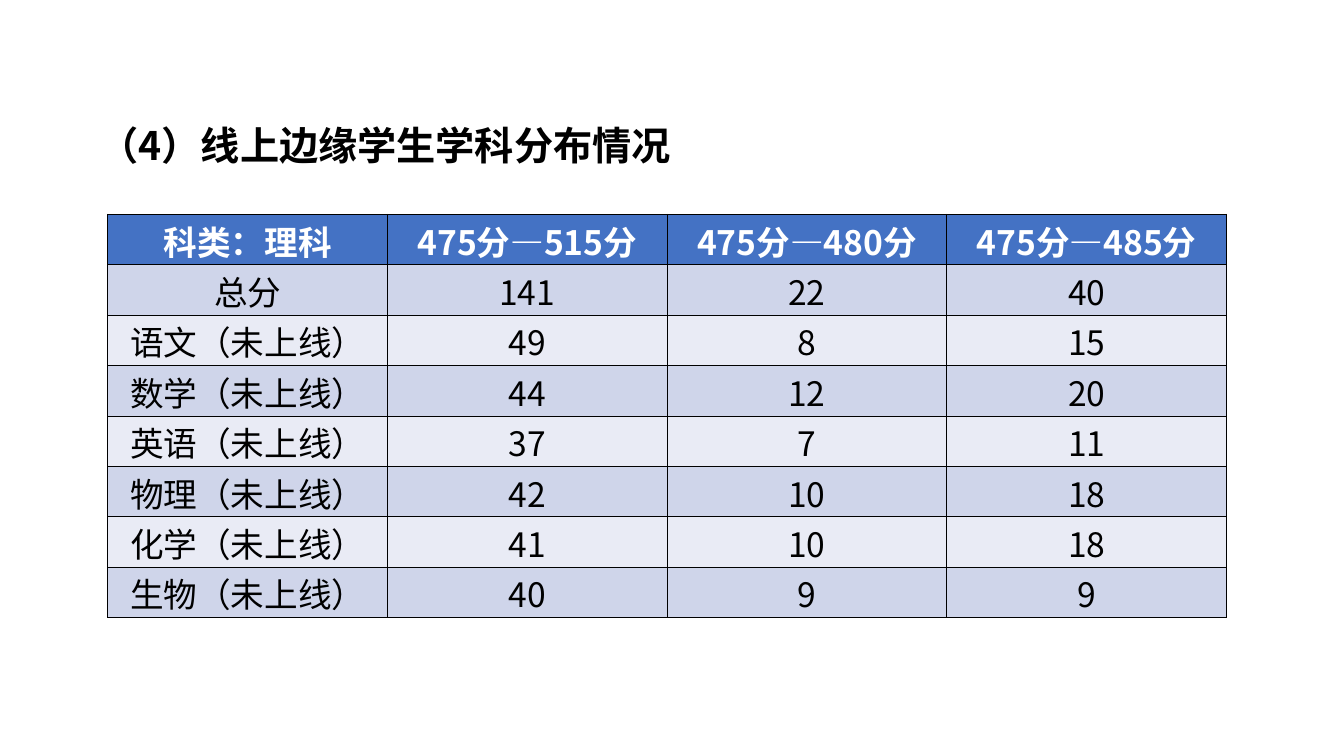
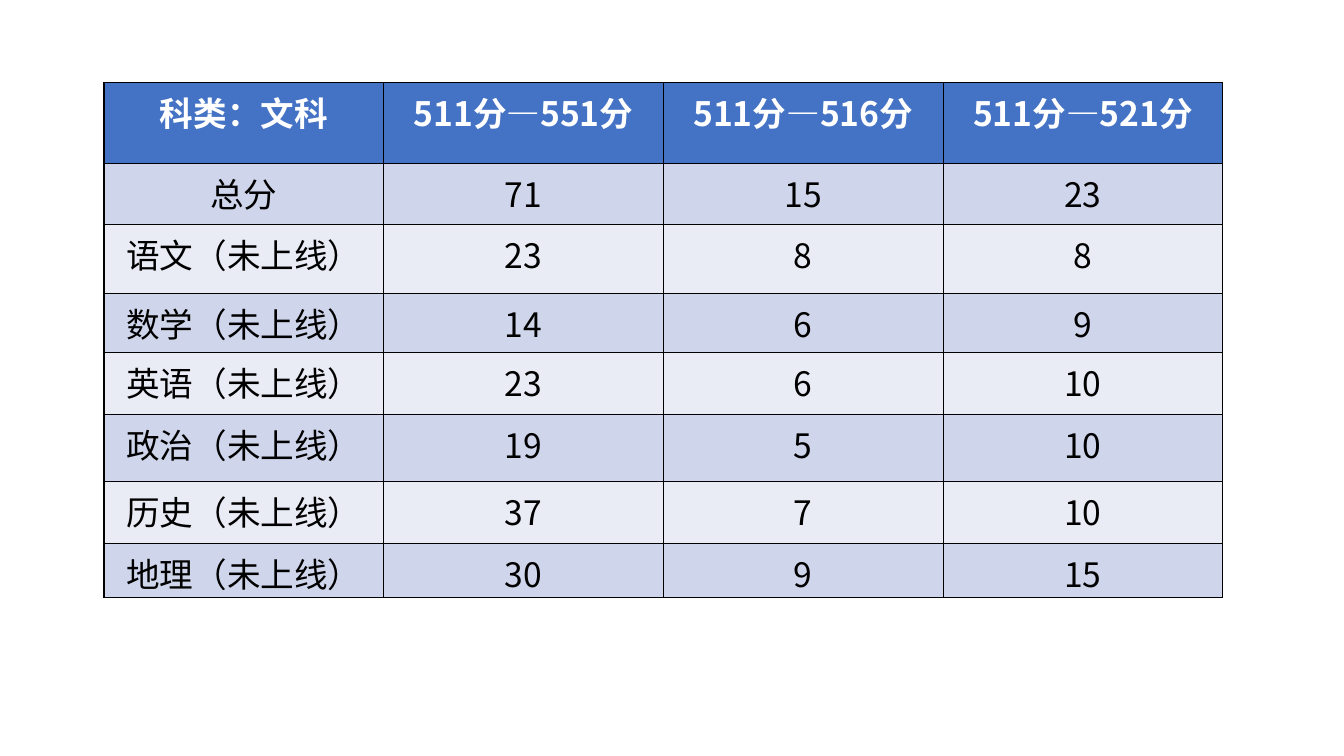
"""Build two slides of score tables for students near the admission line."""
from pptx import Presentation
from pptx.dml.color import RGBColor
from pptx.enum import text
from pptx.oxml import parse_xml
from pptx.oxml.ns import nsdecls
from pptx.util import Pt

FONT = "Noto Sans CJK SC"
BLACK, WHITE = "000000", "FFFFFF"
HEADER_FILL = "4472C4"
BAND_FILLS = ("CFD5EA", "E9EBF5")
COLUMN_WIDTH = 199.8
BELOW_LINE = "（未上线）"

SCIENCE_ROWS = [
    ("科类：理科", "475分—515分", "475分—480分", "475分—485分"),
    ("总分", 141, 22, 40),
    ("语文" + BELOW_LINE, 49, 8, 15),
    ("数学" + BELOW_LINE, 44, 12, 20),
    ("英语" + BELOW_LINE, 37, 7, 11),
    ("物理" + BELOW_LINE, 42, 10, 18),
    ("化学" + BELOW_LINE, 41, 10, 18),
    ("生物" + BELOW_LINE, 40, 9, 9),
]
ARTS_ROWS = [
    ("科类：文科", "511分—551分", "511分—516分", "511分—521分"),
    ("总分", 71, 15, 23),
    ("语文" + BELOW_LINE, 23, 8, 8),
    ("数学" + BELOW_LINE, 14, 6, 9),
    ("英语" + BELOW_LINE, 23, 6, 10),
    ("政治" + BELOW_LINE, 19, 5, 10),
    ("历史" + BELOW_LINE, 37, 7, 10),
    ("地理" + BELOW_LINE, 30, 9, 15),
]
SCIENCE_HEIGHTS = [36] * len(SCIENCE_ROWS)
ARTS_HEIGHTS = [57.6, 43.9, 49.2, 42.2, 44.4, 47.8, 44.4, 38.4]


def color(value):
    """Turn a hex string into a colour."""
    return RGBColor.from_string(value)


def add_run(paragraph, words, size, ink, bold):
    """Add one run with the shared font for Latin and Chinese text."""
    run = paragraph.add_run()
    run.text = words
    font = run.font
    font.name, font.size, font.bold = FONT, Pt(size), bold
    font.color.rgb = color(ink)
    east_asian = parse_xml(f'<a:ea {nsdecls("a")} typeface="{FONT}"/>')
    font._element.find(".//{*}latin").addnext(east_asian)


def add_title(slide, words):
    """Add the bold heading above a table."""
    box = slide.shapes.add_textbox(Pt(64), Pt(66.2), Pt(852), Pt(96.5))
    box.text_frame.word_wrap = True
    paragraph = box.text_frame.paragraphs[0]
    paragraph.line_spacing = 1.5
    add_run(paragraph, words, 28, BLACK, True)


def add_borders(cell):
    """Draw a thin black line on all four sides of a cell."""
    properties = cell._tc.get_or_add_tcPr()
    for index, side in enumerate(("lnL", "lnR", "lnT", "lnB")):
        properties.insert(index, parse_xml(
            f'<a:{side} {nsdecls("a")} w="{Pt(1)}"><a:solidFill>'
            f'<a:srgbClr val="{BLACK}"/></a:solidFill></a:{side}>'))


def fill_cell(cell, words, row_index, top_margin):
    """Write and colour one cell according to its row."""
    header = row_index == 0
    cell.fill.solid()
    fill = HEADER_FILL if header else BAND_FILLS[(row_index - 1) % 2]
    cell.fill.fore_color.rgb = color(fill)
    cell.margin_left = cell.margin_right = Pt(5.4)
    cell.margin_top, cell.margin_bottom = Pt(top_margin), Pt(0)
    add_borders(cell)
    paragraph = cell.text_frame.paragraphs[0]
    paragraph.alignment = text.PP_ALIGN.CENTER
    add_run(paragraph, words, 24, WHITE if header else BLACK, header)


def add_score_table(slide, left, top, rows, heights, top_margin):
    """Add a banded table with equal columns and the given row heights."""
    count = len(rows[0])
    table = slide.shapes.add_table(
        len(rows), count, Pt(left), Pt(top),
        Pt(COLUMN_WIDTH * count), Pt(sum(heights))).table
    for column in table.columns:
        column.width = Pt(COLUMN_WIDTH)
    for row_index, (values, height) in enumerate(zip(rows, heights)):
        table.rows[row_index].height = Pt(height)
        for column_index, value in enumerate(values):
            fill_cell(table.cell(row_index, column_index), str(value),
                      row_index, top_margin)


def main():
    """Build and save the presentation."""
    presentation = Presentation()
    presentation.slide_width, presentation.slide_height = Pt(960), Pt(540)
    blank = presentation.slide_layouts[6]

    science = presentation.slides.add_slide(blank)
    add_title(science, "（4）线上边缘学生学科分布情况")
    add_score_table(science, 77, 153.2, SCIENCE_ROWS, SCIENCE_HEIGHTS, 1.2)

    arts = presentation.slides.add_slide(blank)
    add_score_table(arts, 74.3, 59, ARTS_ROWS, ARTS_HEIGHTS, 3.6)

    presentation.save("out.pptx")


if __name__ == "__main__":
    main()
